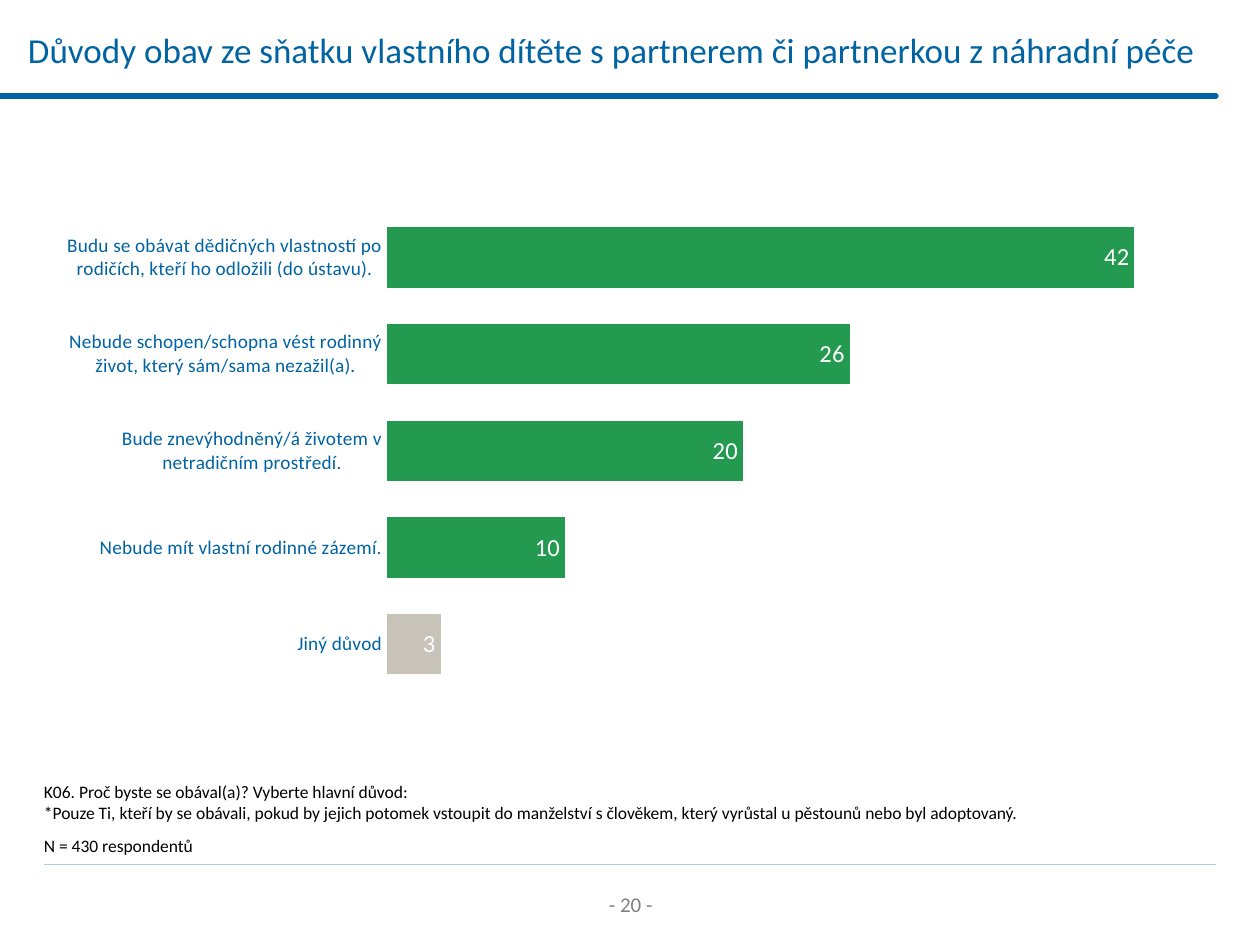
from typing import NamedTuple

import pptx
import pptx.chart.data
import pptx.dml.color
import pptx.enum.chart
import pptx.enum.shapes
import pptx.enum.text
import pptx.oxml
import pptx.util

PX_PER_INCH = 126
FONT = "Calibri"
BLUE = pptx.dml.color.RGBColor(0x00, 0x63, 0xA2)
PALE_BLUE = pptx.dml.color.RGBColor(0xAF, 0xCF, 0xEA)
GREEN = pptx.dml.color.RGBColor(0x24, 0x9A, 0x50)
SAND = pptx.dml.color.RGBColor(0xC8, 0xC3, 0xB8)
GRAY = pptx.dml.color.RGBColor(0x80, 0x80, 0x80)
BLACK = pptx.dml.color.RGBColor(0x00, 0x00, 0x00)
WHITE = pptx.dml.color.RGBColor(0xFF, 0xFF, 0xFF)
LEFT = pptx.enum.text.PP_ALIGN.LEFT
CENTER = pptx.enum.text.PP_ALIGN.CENTER
TOP = pptx.enum.text.MSO_ANCHOR.TOP
MIDDLE = pptx.enum.text.MSO_ANCHOR.MIDDLE


class Box(NamedTuple):
    left: int
    top: int
    width: int
    height: int


class Rule(NamedTuple):
    left: int
    right: int
    y: int
    color: pptx.dml.color.RGBColor
    weight: float
    cap: str


class Reason(NamedTuple):
    label: str
    percent: int
    color: pptx.dml.color.RGBColor = GREEN


RULES = [
    Rule(44, 1216, 864, PALE_BLUE, 0.5, "flat"),
    Rule(0, 1216, 96, BLUE, 3, "rnd"),
]

REASONS = [
    Reason("Budu se obávat dědičných vlastností po rodičích, kteří ho odložili (do ústavu).", 42),
    Reason("Nebude schopen/schopna vést rodinný život, který sám/sama nezažil(a).", 26),
    Reason("Bude znevýhodněný/á životem v netradičním prostředí.", 20),
    Reason("Nebude mít vlastní rodinné zázemí.", 10),
    Reason("Jiný důvod", 3, SAND),
]

QUESTION = (
    "K06. Proč byste se obával(a)? Vyberte hlavní důvod:\n"
    "*Pouze Ti, kteří by se obávali, pokud by jejich potomek vstoupit do manželství "
    "s člověkem, který vyrůstal u pěstounů nebo byl adoptovaný."
)


def px(length: int) -> pptx.util.Emu:
    return pptx.util.Emu(round(length * 914400 / PX_PER_INCH))


def set_font(font, size: float, color: pptx.dml.color.RGBColor) -> None:
    font.name = FONT
    font.size = pptx.util.Pt(size)
    font.color.rgb = color


def add_text(slide, box: Box, text: str, *, size: float, color=BLACK,
             align=LEFT, anchor=TOP, inset_left: int = 13) -> None:
    frame = slide.shapes.add_textbox(*map(px, box)).text_frame
    frame.word_wrap = True
    frame.vertical_anchor = anchor
    frame.margin_left = px(inset_left)
    frame.text = text
    for paragraph in frame.paragraphs:
        paragraph.alignment = align
        set_font(paragraph.font, size, color)


def add_rule(slide, rule: Rule) -> None:
    connector = slide.shapes.add_connector(
        pptx.enum.shapes.MSO_CONNECTOR.STRAIGHT,
        px(rule.left), px(rule.y), px(rule.right), px(rule.y))
    connector.line.color.rgb = rule.color
    connector.line.width = pptx.util.Pt(rule.weight)
    properties = connector._element.spPr
    properties.get_or_add_ln().set("cap", rule.cap)
    properties.append(pptx.oxml.parse_xml(
        '<a:effectLst xmlns:a="http://schemas.openxmlformats.org/drawingml/2006/main"/>'))


def set_plot_layout(chart, **fractions: float) -> None:
    """Fix the inner plot area as fractions (x, y, w, h) of the chart."""
    plot_area = chart._chartSpace.chart.plotArea
    for layout in plot_area.findall("{*}layout"):
        plot_area.remove(layout)
    modes = '<c:layoutTarget val="inner"/><c:xMode val="edge"/><c:yMode val="edge"/>'
    values = "".join(f'<c:{key} val="{value}"/>' for key, value in fractions.items())
    plot_area.insert(0, pptx.oxml.parse_xml(
        '<c:layout xmlns:c="http://schemas.openxmlformats.org/drawingml/2006/chart">'
        f"<c:manualLayout>{modes}{values}</c:manualLayout></c:layout>"))


def add_reason_chart(slide, box: Box, reasons: list[Reason]) -> None:
    data = pptx.chart.data.CategoryChartData(number_format="#,##0")
    data.categories = [reason.label for reason in reasons]
    data.add_series("Series 1", [reason.percent for reason in reasons])
    chart = slide.shapes.add_chart(
        pptx.enum.chart.XL_CHART_TYPE.BAR_CLUSTERED, *map(px, box), data).chart
    chart.has_legend = False
    chart.has_title = False
    set_font(chart.font, 18, BLACK)
    set_plot_layout(chart, x=0.3, y=0.01, w=0.7, h=0.93)

    for axis in (chart.category_axis, chart.value_axis):
        axis.has_major_gridlines = False
        axis.major_tick_mark = pptx.enum.chart.XL_TICK_MARK.NONE
        axis.minor_tick_mark = pptx.enum.chart.XL_TICK_MARK.NONE
        axis.format.line.fill.background()
    chart.category_axis.reverse_order = True
    set_font(chart.category_axis.tick_labels.font, 11, BLUE)
    chart.value_axis.minimum_scale = 0
    chart.value_axis.maximum_scale = 45
    chart.value_axis.tick_label_position = pptx.enum.chart.XL_TICK_LABEL_POSITION.NONE

    plot = chart.plots[0]
    plot.gap_width = 60
    plot.vary_by_categories = False
    series = plot.series[0]
    series.invert_if_negative = False
    series.format.fill.solid()
    series.format.fill.fore_color.rgb = GREEN
    for index, reason in enumerate(reasons):
        if reason.color != GREEN:
            fill = series.points[index].format.fill
            fill.solid()
            fill.fore_color.rgb = reason.color

    labels = series.data_labels
    labels.show_value = True
    labels.number_format = "#,##0"
    labels.number_format_is_linked = False
    labels.position = pptx.enum.chart.XL_LABEL_POSITION.INSIDE_END
    set_font(labels.font, 14, WHITE)


def main() -> None:
    presentation = pptx.Presentation()
    presentation.slide_width = px(1260)
    presentation.slide_height = px(945)
    slide = presentation.slides.add_slide(presentation.slide_layouts[6])

    for rule in RULES:
        add_rule(slide, rule)
    add_text(slide, Box(551, 885, 159, 38), "- 20 -", size=12, color=GRAY, align=CENTER)
    add_text(slide, Box(15, 0, 1216, 100),
             "Důvody obav ze sňatku vlastního dítěte s partnerem či partnerkou z náhradní péče",
             size=20, color=BLUE, anchor=MIDDLE)
    add_text(slide, Box(44, 775, 1173, 55), QUESTION, size=10, inset_left=0)
    add_text(slide, Box(44, 829, 856, 34), "N = 430 respondentů", size=10, inset_left=0)
    add_reason_chart(slide, Box(44, 204, 1144, 520), REASONS)
    presentation.save("out.pptx")


if __name__ == "__main__":
    main()
